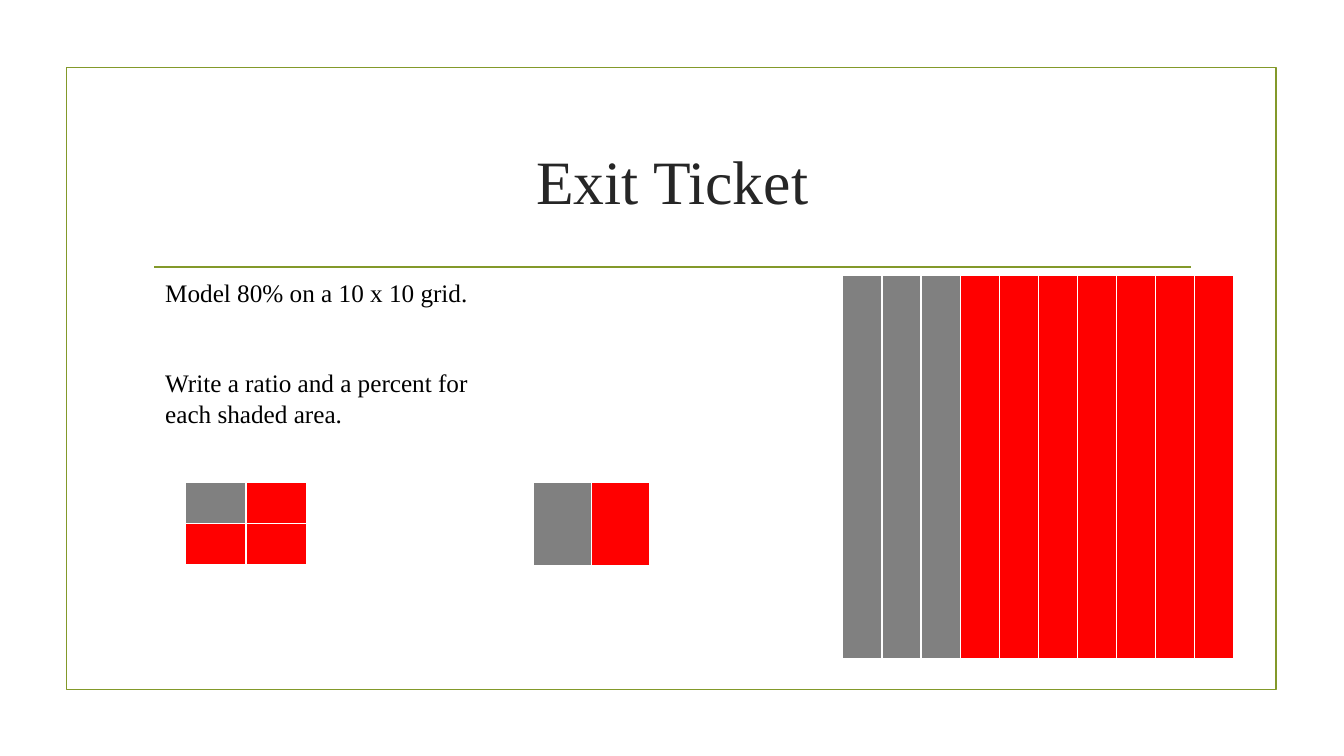
from lxml.etree import SubElement
from pptx import Presentation
from pptx.dml.color import RGBColor
from pptx.enum.shapes import MSO_CONNECTOR, MSO_SHAPE
from pptx.enum.text import MSO_ANCHOR, MSO_AUTO_SIZE, PP_ALIGN
from pptx.oxml.ns import qn
from pptx.util import Inches, Pt

GREEN, GRAY, RED = "83992A", "808080", "FF0000"


def color(value):
    return RGBColor.from_string(value)


def write(p, text, size=18, fill="000000", font="Times New Roman", align=PP_ALIGN.LEFT, before=0):
    p.alignment = align
    p.space_before = Pt(before)
    r = p.add_run()
    r.text = text
    r.font.name, r.font.size = font, Pt(size)
    r.font.color.rgb = color(fill)


class TicketSlide:
    def __init__(self, s, accent, line_width):
        self.s = s
        self.accent = accent
        self.line_width = line_width

    def stroke(self, line):
        line.color.rgb = color(self.accent)
        line.width = Pt(self.line_width)

    def frame(self, *box):
        sp = self.s.shapes.add_shape(MSO_SHAPE.RECTANGLE, *map(Inches, box))
        sp.shadow.inherit = False
        sp.fill.background()
        self.stroke(sp.line)

    def rule(self, left, right, y):
        sp = self.s.shapes.add_connector(MSO_CONNECTOR.STRAIGHT, *map(Inches, (left, y, right, y)))
        self.stroke(sp.line)
        SubElement(sp._element.spPr, qn("a:effectLst"))

    def title(self, text, *box):
        sp = self.s.shapes.title
        sp.left, sp.top, sp.width, sp.height = map(Inches, box)
        tf = sp.text_frame
        tf.vertical_anchor = MSO_ANCHOR.MIDDLE
        write(tf.paragraphs[0], text, size=44, fill="262626", align=PP_ALIGN.CENTER)

    def text(self, lines, gap, *box):
        tf = self.s.shapes.add_textbox(*map(Inches, box)).text_frame
        tf.word_wrap = True
        tf.auto_size = MSO_AUTO_SIZE.SHAPE_TO_FIT_TEXT
        for i, line in enumerate(lines):
            p = tf.add_paragraph() if i else tf.paragraphs[0]
            write(p, line, before=gap if i else 0)

    def grid(self, rows, cols, shaded, *box):
        tbl = self.s.shapes.add_table(rows, cols, *map(Inches, box)).table
        for i, cell in enumerate(tbl.iter_cells()):
            cell.fill.solid()
            cell.fill.fore_color.rgb = color(GRAY if i < shaded else RED)


def main():
    prs = Presentation()
    prs.slide_width, prs.slide_height = Inches(13.33), Inches(7.5)
    ticket = TicketSlide(prs.slides.add_slide(prs.slide_layouts[5]), GREEN, 1.25)
    ticket.frame(0.66, 0.67, 12, 6.17)
    ticket.rule(1.53, 11.81, 2.65)
    ticket.title("Exit Ticket", 1.42, 1.07, 10.5, 1.43)
    ticket.text(
        ["Model 80% on a 10 x 10 grid.", "Write a ratio and a percent for each shaded area."],
        43, 1.54, 2.7, 3.62, 1.62,
    )
    ticket.grid(2, 2, 1, 1.84, 4.79, 1.2, 0.81)
    ticket.grid(1, 2, 1, 5.29, 4.79, 1.15, 0.82)
    ticket.grid(1, 10, 3, 8.36, 2.73, 3.88, 3.8)
    prs.save("out.pptx")


if __name__ == "__main__":
    main()
